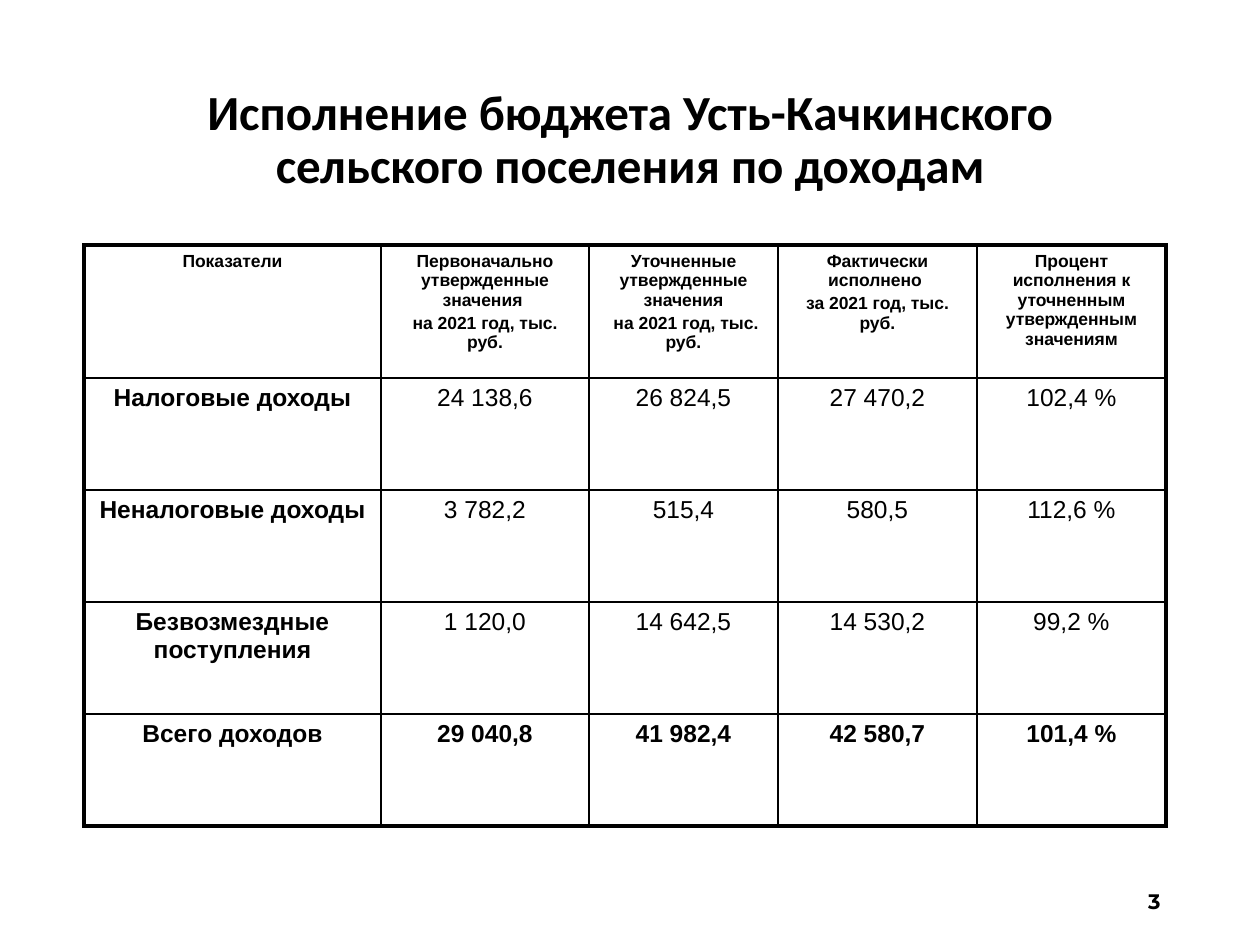
from lxml import etree
from pptx import Presentation
from pptx import util as u
from pptx.dml.color import RGBColor
from pptx.enum import text
from pptx.oxml.ns import qn

PX = 914400 / 126
BLACK = RGBColor(0, 0, 0)
THIN, THICK = 1, 2.25

COLUMNS = [297, 208, 189, 199, 189]
ROWS = [133, 112, 112, 112, 112]
CELLS = [
    ["Показатели",
     "Первоначально утвержденные значения \nна 2021 год, тыс. руб.",
     "Уточненные утвержденные значения\n на 2021 год, тыс. руб.",
     "Фактически исполнено \nза 2021 год, тыс. руб.",
     "Процент исполнения к уточненным утвержденным значениям"],
    ["Налоговые доходы", "24 138,6", "26 824,5", "27 470,2", "102,4 %"],
    ["Неналоговые доходы", "3 782,2", "515,4", "580,5", "112,6 %"],
    ["Безвозмездные поступления", "1 120,0", "14 642,5", "14 530,2", "99,2 %"],
    ["Всего доходов", "29 040,8", "41 982,4", "42 580,7", "101,4 %"],
]


def px(n):
    return u.Emu(round(n * PX))


def style(p, font, size, bold, align):
    p.alignment = align
    p.font.name = font
    p.font.size = u.Pt(size)
    p.font.bold = bold
    p.font.color.rgb = BLACK


def set_border(cell, side, width):
    tcPr = cell._tc.get_or_add_tcPr()
    ln = etree.SubElement(tcPr, qn("a:ln" + side), w=str(u.Pt(width)))
    fill = etree.SubElement(ln, qn("a:solidFill"))
    etree.SubElement(fill, qn("a:srgbClr"), val=str(BLACK))


def add_title(slide, x, y, w, h):
    sp = slide.shapes.title
    sp.left, sp.top, sp.width, sp.height = px(x), px(y), px(w), px(h)
    tf = sp.text_frame
    tf.text = "Исполнение бюджета Усть-Качкинского сельского поселения по доходам"
    tf.word_wrap = True
    tf.vertical_anchor = text.MSO_ANCHOR.MIDDLE
    p = tf.paragraphs[0]
    style(p, "Calibri", 28, True, text.PP_ALIGN.CENTER)
    p.line_spacing = 0.9


def add_income_table(slide, x, y):
    last_row, last_col = len(ROWS) - 1, len(COLUMNS) - 1
    frame = slide.shapes.add_table(len(ROWS), len(COLUMNS), px(x), px(y),
                                   px(sum(COLUMNS)), px(sum(ROWS)))
    table = frame.table
    table.horz_banding = False
    for column, width in zip(table.columns, COLUMNS):
        column.width = px(width)
    for row, height in zip(table.rows, ROWS):
        row.height = px(height)

    for i, values in enumerate(CELLS):
        size = 10 if i == 0 else 14
        for j, value in enumerate(values):
            cell = table.cell(i, j)
            cell.text = value
            bold = i in (0, last_row) or j == 0
            for p in cell.text_frame.paragraphs:
                style(p, "Arial", size, bold, text.PP_ALIGN.CENTER)
                p.space_before = u.Pt(size * 0.2)
            # Thick outer frame, thin inner grid
            outer = {"L": j == 0, "R": j == last_col,
                     "T": i == 0, "B": i == last_row}
            for side, is_outer in outer.items():
                set_border(cell, side, THICK if is_outer else THIN)
            cell.fill.background()


def add_page_number(slide, x, y, w, h):
    tf = slide.shapes.add_textbox(px(x), px(y), px(w), px(h)).text_frame
    tf.word_wrap = True
    tf.vertical_anchor = text.MSO_ANCHOR.MIDDLE
    tf.text = "3"
    style(tf.paragraphs[0], "Montserrat", 12, True, text.PP_ALIGN.RIGHT)


def main():
    prs = Presentation()
    prs.slide_width, prs.slide_height = px(1260), px(945)
    slide = prs.slides.add_slide(prs.slide_layouts[5])
    add_title(slide, 87, 50, 1086, 183)
    add_income_table(slide, 84, 245)
    add_page_number(slide, 890, 876, 283, 50)
    prs.save("out.pptx")


if __name__ == "__main__":
    main()
